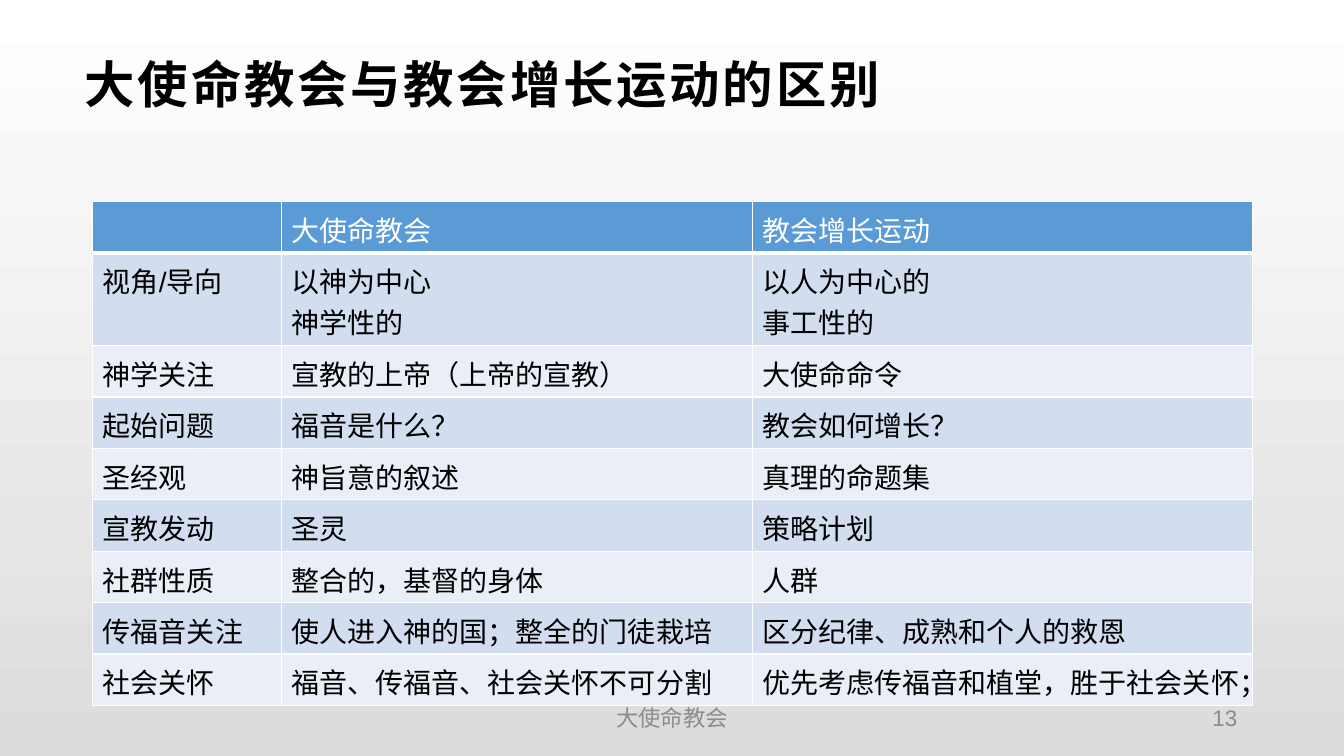
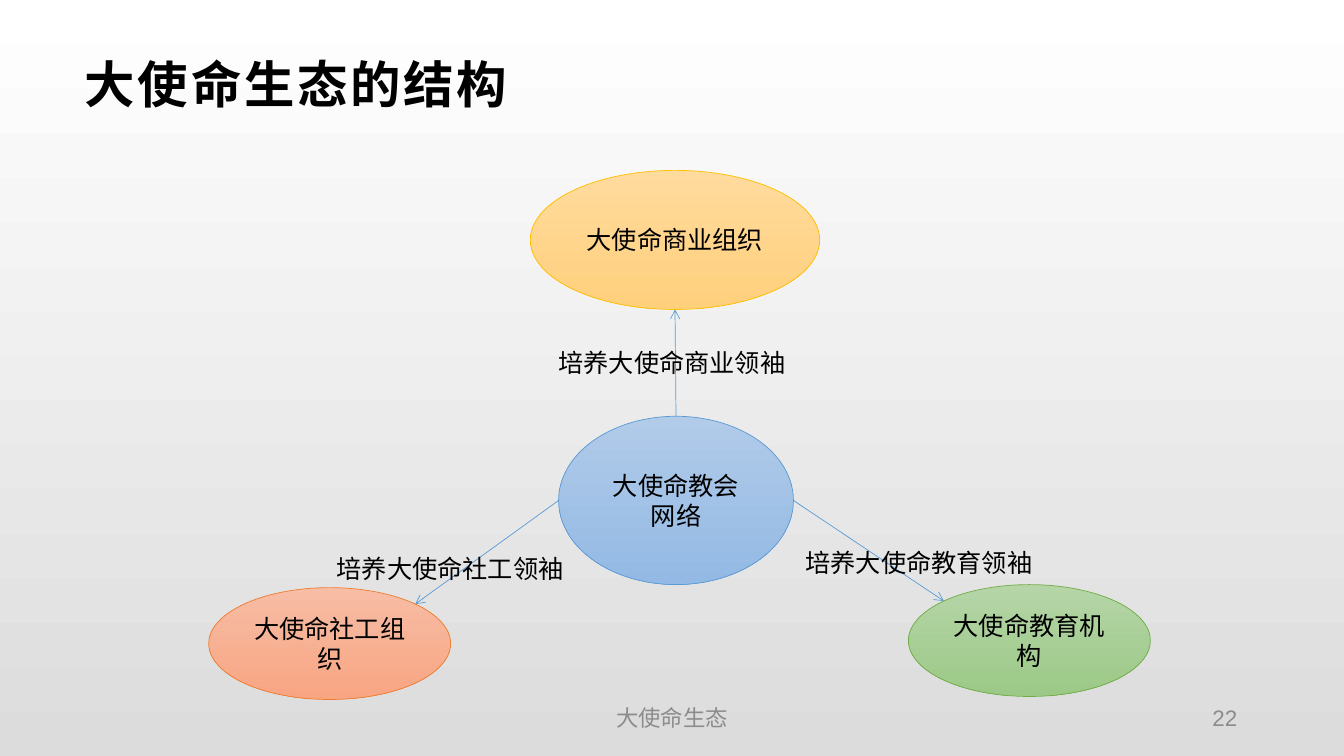
from math import cos, radians, sin

from lxml.etree import SubElement
from pptx import Presentation
from pptx.dml.color import RGBColor
from pptx.enum.shapes import MSO_CONNECTOR as Connector, MSO_SHAPE as Shape
from pptx.enum.text import MSO_ANCHOR as Anchor, PP_ALIGN as Align
from pptx.oxml.ns import qn
from pptx.util import Inches, Pt

FONT = "Arial"
COLORS = {
    "black": "000000",
    "white": "FFFFFF",
    "page_end": "DCDCDC",
    "footer": "8C8C8C",
    "blue": "5B9BD5",
    "orange": "ED7D31",
    "gold": "FFC000",
    "green": "70AD47",
    "band_dark": "D2DEEF",
    "band_light": "EAEFF7",
}
GRADIENTS = {
    "blue": ("B1CBE9", "93B9E4"),
    "orange": ("F7BDA5", "F8A582"),
    "gold": ("FFDB9E", "FFD07C"),
    "green": ("B5D5A7", "9CC987"),
}

TITLE_BOX = (0.73, 0.47, 11.87, 0.71)
FOOTER_BOX = (4.5, 6.94, 4.33, 0.35)
NUMBER_BOX = (9.42, 6.94, 2.95, 0.35)

COLUMN_WIDTHS = (1.87, 4.67, 4.96)
LINE_HEIGHT = 0.41
CELL_PADDING = 0.1
COMPARISON = [
    ("", "大使命教会", "教会增长运动"),
    ("视角/导向", "以神为中心\n神学性的", "以人为中心的\n事工性的"),
    ("神学关注", "宣教的上帝（上帝的宣教）", "大使命命令"),
    ("起始问题", "福音是什么？", "教会如何增长？"),
    ("圣经观", "神旨意的叙述", "真理的命题集"),
    ("宣教发动", "圣灵", "策略计划"),
    ("社群性质", "整合的，基督的身体", "人群"),
    ("传福音关注", "使人进入神的国；整全的门徒栽培", "区分纪律、成熟和个人的救恩"),
    ("社会关怀", "福音、传福音、社会关怀不可分割", "优先考虑传福音和植堂，胜于社会关怀；"),
]

NETWORK = ("大使命教会网络", (5.54, 4.13, 2.33, 1.67), "blue")
PARTNERS = [
    (("大使命社工组织", (2.07, 5.83, 2.4, 1.11), "orange"), 180, 45,
     "培养大使命社工领袖", (3.24, 5.44)),
    (("大使命商业组织", (5.26, 1.69, 2.87, 1.38), "gold"), 90, 270,
     "培养大使命商业领袖", (5.44, 3.4)),
    (("大使命教育机构", (9.01, 5.8, 2.4, 1.11), "green"), 0, 135,
     "培养大使命教育领袖", (7.89, 5.38)),
]


def rgb(value):
    return RGBColor.from_string(value)


def inches(values):
    return [Inches(value) for value in values]


def set_attributes(target, values):
    for name, value in values.items():
        setattr(target, name, value)


def write(frame, text, size, color="black", bold=False, align=Align.LEFT,
          line_spacing=None, letter_spacing=None):
    frame.text = text
    for paragraph in frame.paragraphs:
        set_attributes(paragraph, {"alignment": align, "line_spacing": line_spacing})
        for run in paragraph.runs:
            set_attributes(run.font, {"name": FONT, "size": Pt(size), "bold": bold})
            run.font.color.rgb = rgb(COLORS[color])
            properties = run.font._element
            SubElement(properties, qn("a:ea"), typeface=FONT)
            if letter_spacing:
                properties.set("spc", str(letter_spacing * 100))


def fill_gradient(fill, colors):
    fill.gradient()
    fill.gradient_angle = 270
    for stop, color, position in zip(fill.gradient_stops, colors, (0, 1)):
        set_attributes(stop, {"position": position})
        stop.color.rgb = rgb(color)


def add_text(slide, box, text, size, wrap=True, anchor=Anchor.MIDDLE, **style):
    frame = slide.shapes.add_textbox(*inches(box)).text_frame
    set_attributes(frame, {"word_wrap": wrap, "vertical_anchor": anchor})
    write(frame, text, size, **style)


def add_page(deck, title, footer, number):
    slide = deck.slides.add_slide(deck.slide_layouts[5])
    heading = slide.shapes.title
    set_attributes(heading, dict(zip(("left", "top", "width", "height"), inches(TITLE_BOX))))
    set_attributes(heading.text_frame, {
        "margin_left": Inches(0.11),
        "margin_right": Inches(0.08),
        "margin_top": Inches(0.04),
        "margin_bottom": Inches(0.04),
        "vertical_anchor": Anchor.MIDDLE,
        "word_wrap": True,
    })
    write(heading.text_frame, title, 36, bold=True, letter_spacing=2)
    add_text(slide, FOOTER_BOX, footer, 16, color="footer", align=Align.CENTER)
    add_text(slide, NUMBER_BOX, str(number), 16, color="footer", align=Align.RIGHT)
    return slide


def add_borders(cell, bottom_width):
    properties = cell._tc.get_or_add_tcPr()
    for side, width in (("L", 1), ("R", 1), ("T", 1), ("B", bottom_width)):
        border = SubElement(properties, qn(f"a:ln{side}"), w=str(Pt(width)))
        solid = SubElement(border, qn("a:solidFill"))
        SubElement(solid, qn("a:srgbClr"), val=COLORS["white"])


def add_comparison(slide):
    heights = [LINE_HEIGHT * (1 + max(text.count("\n") for text in row)) + CELL_PADDING
               for row in COMPARISON]
    frame = slide.shapes.add_table(
        len(COMPARISON), len(COLUMN_WIDTHS),
        *inches((0.92, 2, sum(COLUMN_WIDTHS), sum(heights))))
    table = frame.table
    for column, width in zip(table.columns, COLUMN_WIDTHS):
        column.width = Inches(width)
    for index, (row, height, texts) in enumerate(zip(table.rows, heights, COMPARISON)):
        row.height = Inches(height)
        header = index == 0
        band = "blue" if header else ("band_light", "band_dark")[index % 2]
        for cell, text in zip(row.cells, texts):
            add_borders(cell, 3 if header else 1)
            cell.fill.solid()
            cell.fill.fore_color.rgb = rgb(COLORS[band])
            write(cell.text_frame, text, 20, color="white" if header else "black",
                  line_spacing=Pt(29))


def add_node(slide, text, box, color):
    node = slide.shapes.add_shape(Shape.OVAL, *inches(box))
    node.shadow.inherit = False
    fill_gradient(node.fill, GRADIENTS[color])
    node.line.color.rgb = rgb(COLORS[color])
    node.line.width = Pt(0.5)
    write(node.text_frame, text, 18, align=Align.CENTER)


def rim_point(box, degrees):
    left, top, width, height = box
    angle = radians(degrees)
    return (left + width / 2 * (1 + cos(angle)), top + height / 2 * (1 - sin(angle)))


def add_arrow(slide, start, end):
    arrow = slide.shapes.add_connector(Connector.STRAIGHT, *inches(start + end))
    arrow.line.color.rgb = rgb(COLORS["blue"])
    arrow.line.width = Pt(0.5)
    SubElement(arrow.line._get_or_add_ln(), qn("a:tailEnd"), type="arrow")
    SubElement(arrow._element.spPr, qn("a:effectLst"))


def add_ecosystem(slide):
    add_node(slide, *NETWORK)
    for partner, _, _, _, _ in PARTNERS:
        add_node(slide, *partner)
    for partner, start, end, _, _ in PARTNERS:
        add_arrow(slide, rim_point(NETWORK[1], start), rim_point(partner[1], end))
    for _, _, _, label, position in PARTNERS:
        add_text(slide, position + (2.45, 0.4), label, 18, wrap=False, anchor=Anchor.TOP)


def main():
    deck = Presentation()
    set_attributes(deck, {"slide_width": Inches(13.33), "slide_height": Inches(7.5)})
    fill_gradient(deck.slide_master.background.fill, (COLORS["white"], COLORS["page_end"]))
    add_comparison(add_page(deck, "大使命教会与教会增长运动的区别", "大使命教会", 13))
    add_ecosystem(add_page(deck, "大使命生态的结构", "大使命生态", 22))
    deck.save("out.pptx")


if __name__ == "__main__":
    main()
